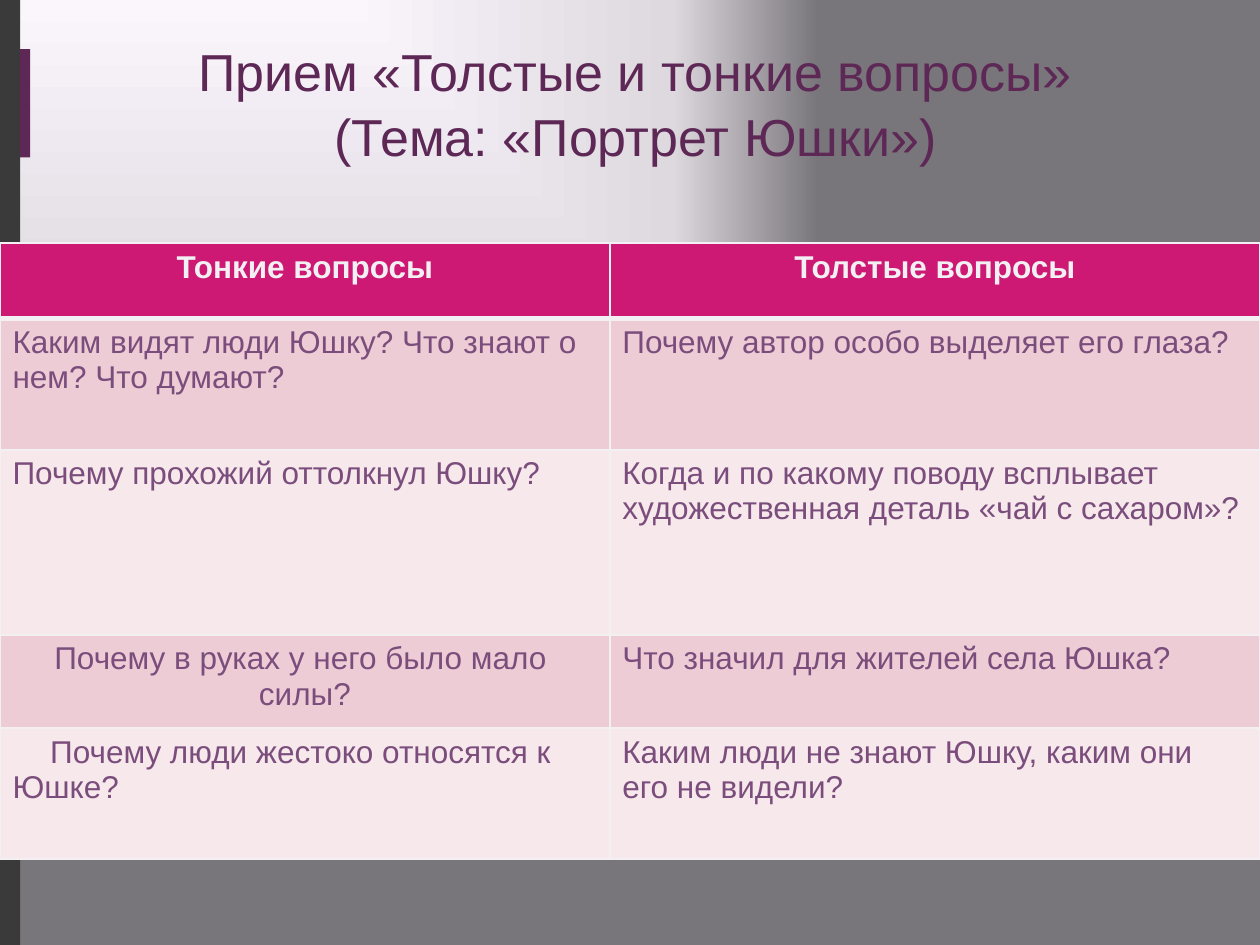
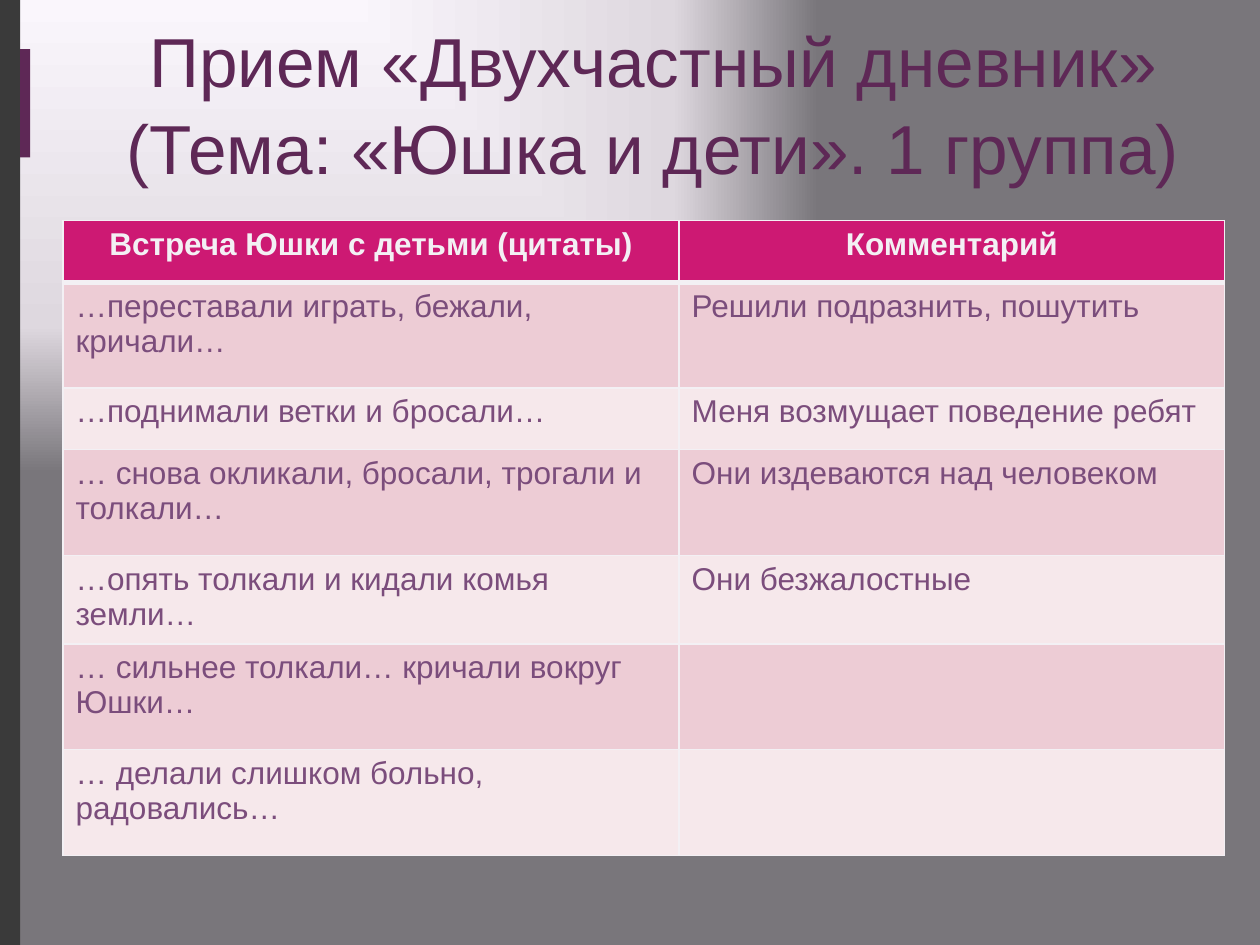
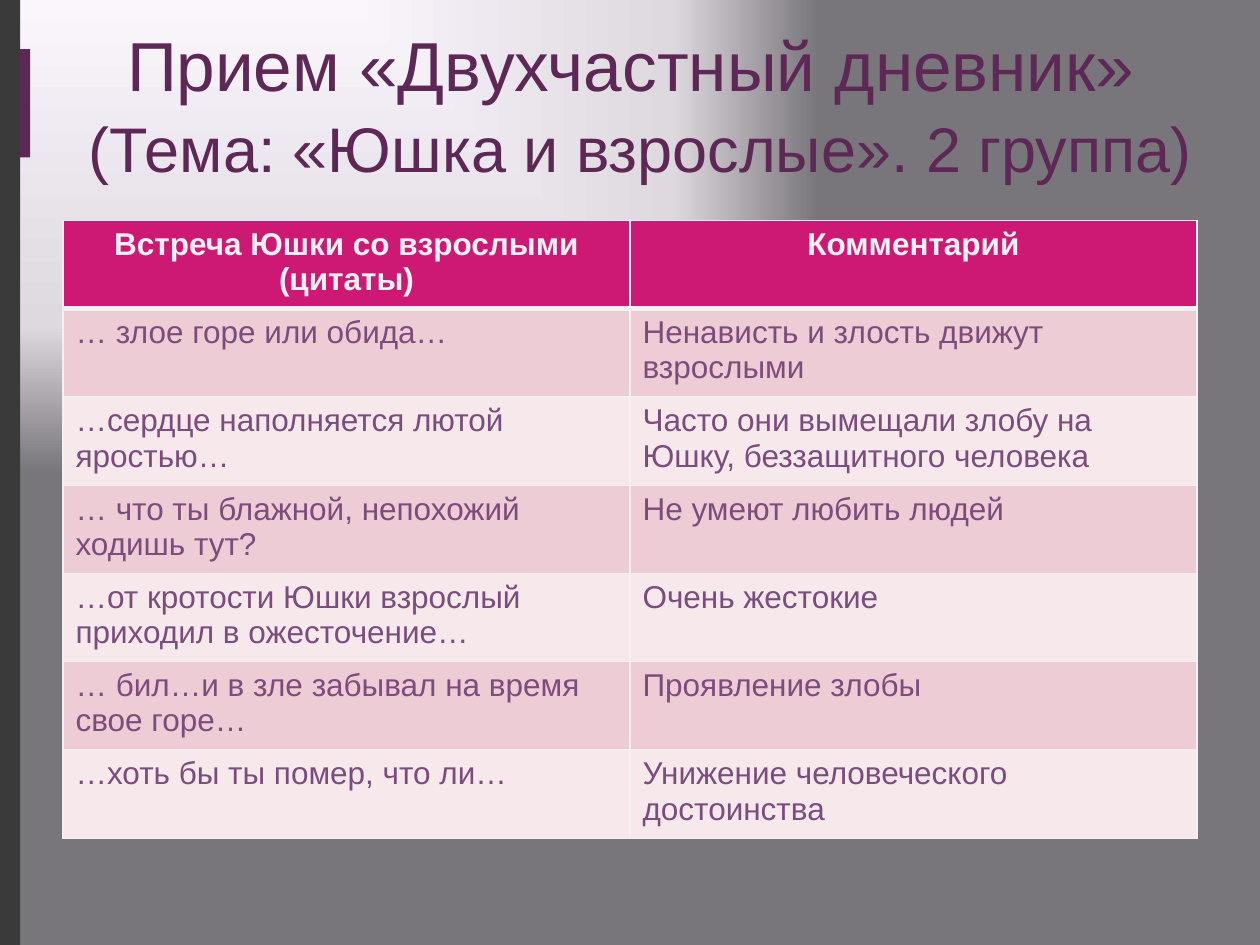
import pptx
import pptx.dml.color
import pptx.enum.shapes
import pptx.enum.text
import pptx.oxml
import pptx.oxml.ns
import pptx.util

Inches = pptx.util.Inches
ALIGN = pptx.enum.text.PP_ALIGN
COLORS = {
    "edge": "3A3A3A", "plum": "5E2856", "header": "CD1973", "light": "F3F0F4",
    "body": "7B4D7C", "odd": "EDCCD5", "even": "F6E8EB",
    "glow": "FAF6FC", "haze": "DED8DF", "smoke": "79767B",
}
NS = pptx.oxml.ns.nsdecls("a")
BANDS = [("edge", 0, 0, 0.16, 7.5), ("plum", 0.16, 0.39, 0.08, 0.86)]

# Each title line is a (text, size) pair; a newline in a cell starts a paragraph.
SLIDES = [
    {
        "title": [("Прием «Толстые и тонкие вопросы»", 29.7),
                  ("(Тема: «Портрет Юшки»)", 29.7)],
        "title_width": 9.35,
        "origin": (0, 1.93),
        "columns": [4.84, 5.16],
        "heights": [0.6, 1.04, 1.47, 0.74, 1.04],
        "rows": [
            ("Тонкие вопросы", "Толстые вопросы"),
            ("Каким видят люди Юшку? Что знают о\nнем? Что думают?",
             "Почему автор особо выделяет его глаза?"),
            ("Почему прохожий оттолкнул Юшку?",
             "Когда и по какому поводу всплывает художественная деталь «чай с сахаром»?"),
            ("Почему в руках у него было мало \nсилы?",
             "Что значил для жителей села Юшка?"),
            ("Почему люди жестоко относятся к \nЮшке?",
             "Каким люди не знают Юшку, каким они\nего не видели?"),
        ],
        "centered": ["Почему в руках у него было мало ", "силы?",
                     "Почему люди жестоко относятся к "],
    },
    {
        "title": [("Прием «Двухчастный дневник»", 39.6),
                  ("(Тема: «Юшка и дети». 1 группа)", 39.6)],
        "title_width": 9.63,
        "origin": (0.5, 1.75),
        "columns": [4.89, 4.33],
        "heights": [0.49, 0.84, 0.49, 0.84, 0.66, 0.84, 0.84],
        "rows": [
            ("Встреча Юшки с детьми (цитаты)", "Комментарий"),
            ("…переставали играть, бежали, кричали…", "Решили подразнить, пошутить"),
            ("…поднимали ветки и бросали…", "Меня возмущает поведение ребят"),
            ("… снова окликали, бросали, трогали и\nтолкали…",
             "Они издеваются над человеком"),
            ("…опять толкали и кидали комья земли…", "Они безжалостные"),
            ("… сильнее толкали… кричали вокруг\nЮшки…", ""),
            ("… делали слишком больно, радовались…", ""),
        ],
        "centered": [],
    },
    {
        "title": [("Прием «Двухчастный дневник» ", 39.6),
                  ("(Тема: «Юшка и взрослые». 2 группа)", 36)],
        "title_width": 9.43,
        "origin": (0.5, 1.75),
        "columns": [4.5, 4.5],
        "heights": [0.66] * 7,
        "rows": [
            ("Встреча Юшки со взрослыми (цитаты)", "Комментарий"),
            ("… злое горе или обида…", "Ненависть и злость движут взрослыми"),
            ("…сердце наполняется лютой яростью…",
             "Часто они вымещали злобу на Юшку, беззащитного человека"),
            ("… что ты блажной, непохожий ходишь тут?", "Не умеют любить людей"),
            ("…от кротости Юшки взрослый приходил в ожесточение…", "Очень жестокие"),
            ("… бил…и в зле забывал на время свое горе…", "Проявление злобы"),
            ("…хоть бы ты помер, что ли…", "Унижение человеческого достоинства"),
        ],
        "centered": [],
    },
]


def write(frame, index, text, size=18, color="body", bold=False, align=ALIGN.LEFT, spacing=None):
    """Write text as paragraph number index of the frame."""
    para = frame.add_paragraph() if index else frame.paragraphs[0]
    para.alignment = align
    para.line_spacing = spacing
    if text:
        span = para.add_run()
        span.text = text
        span.font.name = "Arial"
        span.font.size = pptx.util.Pt(size)
        span.font.bold = bold
        span.font.color.rgb = pptx.dml.color.RGBColor.from_string(COLORS[color])


def style_cell(cell, fill, top, bottom):
    """Fill a cell and draw its borders; top and bottom are widths in points."""
    properties = cell._tc.get_or_add_tcPr()
    for side, width in (("L", 1), ("R", 1), ("T", top), ("B", bottom)):
        properties.append(pptx.oxml.parse_xml(
            f'<a:ln{side} {NS} w="{pptx.util.Pt(width)}"><a:solidFill>'
            f'<a:srgbClr val="{COLORS["light"]}"/></a:solidFill></a:ln{side}>'))
    cell.fill.solid()
    cell.fill.fore_color.rgb = pptx.dml.color.RGBColor.from_string(COLORS[fill])


deck = pptx.Presentation()
deck.slide_width, deck.slide_height = Inches(10), Inches(7.5)

# The master carries the background glow for every slide.
master = deck.slide_master
master.background.fill.solid()
solid = master.element.find(".//" + pptx.oxml.ns.qn("p:bgPr"))[0]
stops = "".join(
    f'<a:gs pos="{place * 1000}"><a:srgbClr val="{COLORS[name]}"/></a:gs>'
    for place, name in ((0, "glow"), (69, "haze"), (100, "smoke")))
solid.getparent().replace(solid, pptx.oxml.parse_xml(
    f'<a:gradFill {NS} rotWithShape="1"><a:gsLst>{stops}</a:gsLst><a:path path="rect">'
    '<a:fillToRect l="0" t="-50000" r="70000" b="180000"/></a:path></a:gradFill>'))

for content in SLIDES:
    page = deck.slides.add_slide(deck.slide_layouts[6])

    for color, *bounds in BANDS:
        band = page.shapes.add_shape(
            pptx.enum.shapes.MSO_SHAPE.RECTANGLE, *map(Inches, bounds))
        band.shadow.inherit = False
        band.fill.solid()
        band.fill.fore_color.rgb = pptx.dml.color.RGBColor.from_string(COLORS[color])
        band.line.fill.background()

    box = page.shapes.add_textbox(
        Inches(0.37), Inches(0.3), Inches(content["title_width"]), Inches(1.01))
    box.text_frame.word_wrap = True
    box.text_frame.vertical_anchor = pptx.enum.text.MSO_ANCHOR.MIDDLE
    for index, (text, size) in enumerate(content["title"]):
        write(box.text_frame, index, text, size=size, color="plum",
              align=ALIGN.CENTER, spacing=1.05)

    columns, heights = content["columns"], content["heights"]
    table = page.shapes.add_table(
        len(heights), len(columns), *map(Inches, content["origin"]),
        Inches(sum(columns)), Inches(sum(heights))).table
    for column, width in zip(table.columns, columns):
        column.width = Inches(width)
    for number, (row, height) in enumerate(zip(table.rows, heights)):
        row.height = Inches(height)
        is_header = number == 0
        fill = "header" if is_header else "odd" if number % 2 else "even"
        for cell, text in zip(row.cells, content["rows"][number]):
            style_cell(cell, fill, top=3 if number == 1 else 1, bottom=3 if is_header else 1)
            for index, line in enumerate(text.split("\n")):
                centered = is_header or line in content["centered"]
                write(cell.text_frame, index, line, bold=is_header,
                      color="light" if is_header else "body",
                      align=ALIGN.CENTER if centered else ALIGN.LEFT)

deck.save("out.pptx")
